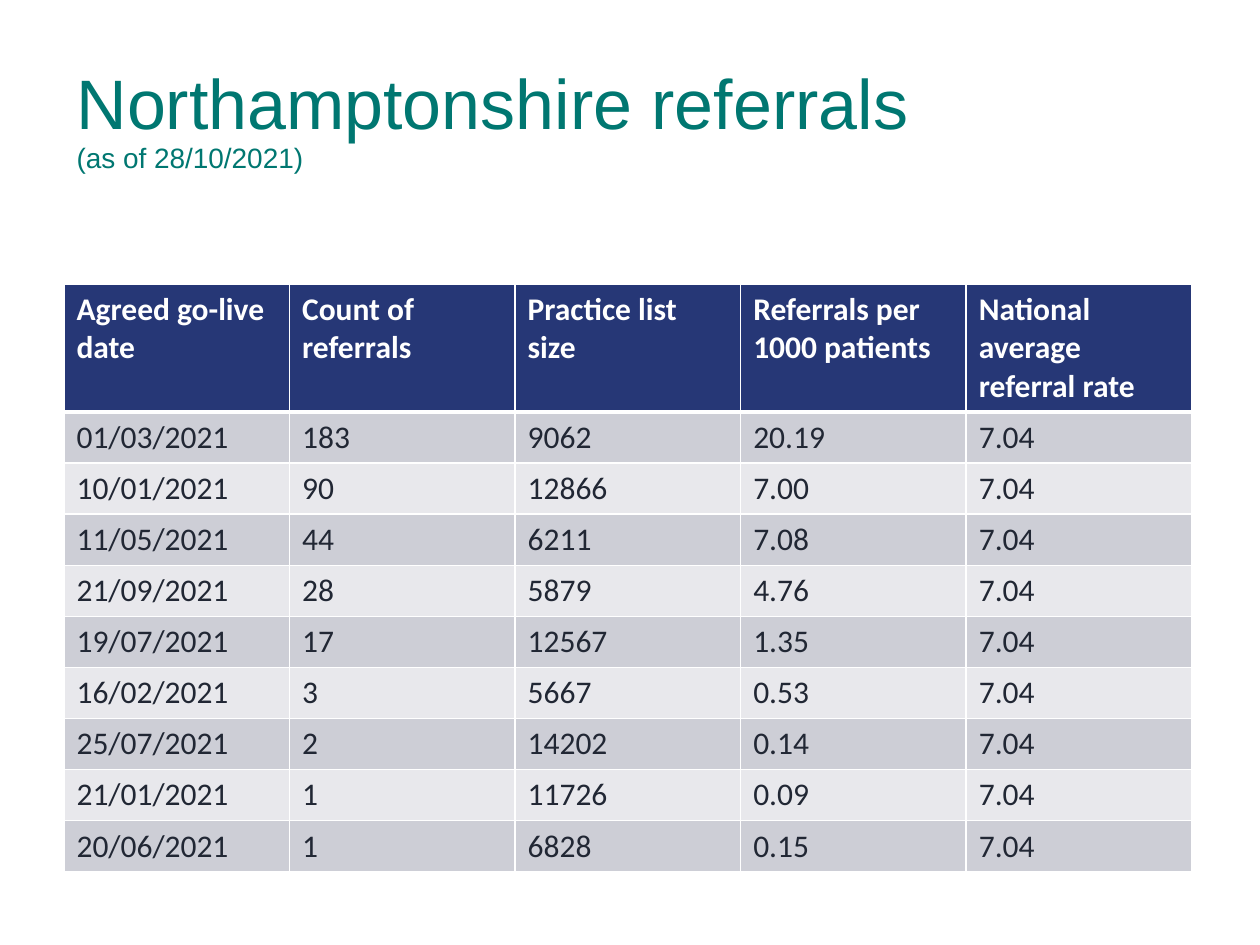
from collections import namedtuple
from dataclasses import dataclass

from lxml.etree import SubElement
from pptx import Presentation
from pptx.dml.color import RGBColor
from pptx.enum.text import MSO_ANCHOR, MSO_AUTO_SIZE, PP_ALIGN
from pptx.oxml.ns import qn
from pptx.util import Emu, Pt

Box = namedtuple("Box", "left top width height")


@dataclass(frozen=True)
class Theme:
    title_font: str = "Arial"
    table_font: str = "Calibri"
    title_color: str = "007771"
    header_fill: str = "263776"
    header_color: str = "FFFFFF"
    body_color: str = "212734"
    band_fills: tuple = ("CDCED6", "E8E8EC")
    border_color: str = "FFFFFF"
    title_size: int = 40
    date_size: int = 16
    table_size: int = 18
    border_width: int = 1
    header_rule_width: int = 3


THEME = Theme()
SLIDE_WIDTH, SLIDE_HEIGHT = 1260, 945
TITLE_BOX = Box(64, 30, 1128, 183)
TABLE_BOX = Box(64, 284, 1128, 586)
BODY_ROW_HEIGHT = 51

HEADINGS = ("Agreed go-live date", "Count of referrals", "Practice list size",
            "Referrals per 1000 patients", "National average referral rate")
NATIONAL_RATE = "7.04"
PRACTICES = (
    ("01/03/2021", "183", "9062", "20.19"),
    ("10/01/2021", "90", "12866", "7.00"),
    ("11/05/2021", "44", "6211", "7.08"),
    ("21/09/2021", "28", "5879", "4.76"),
    ("19/07/2021", "17", "12567", "1.35"),
    ("16/02/2021", "3", "5667", "0.53"),
    ("25/07/2021", "2", "14202", "0.14"),
    ("21/01/2021", "1", "11726", "0.09"),
    ("20/06/2021", "1", "6828", "0.15"),
)


def px(length):
    return Emu(round(length * 914400 / 126))


def add_run(paragraph, text, font_name, size, color, bold=False):
    run = paragraph.add_run()
    run.text = text
    run.font.name = font_name
    run.font.size = Pt(size)
    run.font.bold = bold
    run.font.color.rgb = RGBColor.from_string(color)


def set_borders(cell, top, bottom):
    """Draw all four cell borders; top and bottom are widths in points."""
    properties = cell._tc.get_or_add_tcPr()
    side = THEME.border_width
    for tag, width in (("lnL", side), ("lnR", side), ("lnT", top), ("lnB", bottom)):
        line = SubElement(properties, qn(f"a:{tag}"), w=str(Pt(width)))
        fill = SubElement(line, qn("a:solidFill"))
        SubElement(fill, qn("a:srgbClr"), val=THEME.border_color)


def place_title(slide, box):
    title = slide.shapes.title
    title.left, title.top, title.width, title.height = map(px, box)
    frame = title.text_frame
    frame.word_wrap = True
    frame.auto_size = MSO_AUTO_SIZE.NONE
    frame.vertical_anchor = MSO_ANCHOR.MIDDLE
    paragraph = frame.paragraphs[0]
    paragraph.alignment = PP_ALIGN.LEFT
    paragraph.line_spacing = 0.9
    add_run(paragraph, "Northamptonshire referrals ", THEME.title_font,
            THEME.title_size, THEME.title_color)
    paragraph.add_line_break()
    add_run(paragraph, "(as of 28/10/2021)", THEME.title_font,
            THEME.date_size, THEME.title_color)


def add_referrals_table(slide, box):
    rows = [HEADINGS] + [practice + (NATIONAL_RATE,) for practice in PRACTICES]
    table = slide.shapes.add_table(len(rows), len(HEADINGS), *map(px, box)).table
    for column in table.columns:
        column.width = px(box.width / len(HEADINGS))
    for row in table.rows:
        row.height = px(BODY_ROW_HEIGHT)
    table.rows[0].height = px(box.height - BODY_ROW_HEIGHT * len(PRACTICES))

    for row_index, values in enumerate(rows):
        is_header = row_index == 0
        fill = THEME.header_fill if is_header else THEME.band_fills[(row_index - 1) % 2]
        color = THEME.header_color if is_header else THEME.body_color
        top = THEME.header_rule_width if row_index == 1 else THEME.border_width
        bottom = THEME.header_rule_width if is_header else THEME.border_width
        for column_index, value in enumerate(values):
            cell = table.cell(row_index, column_index)
            set_borders(cell, top, bottom)
            cell.fill.solid()
            cell.fill.fore_color.rgb = RGBColor.from_string(fill)
            add_run(cell.text_frame.paragraphs[0], value, THEME.table_font,
                    THEME.table_size, color, bold=is_header)


def main():
    presentation = Presentation()
    presentation.slide_width = px(SLIDE_WIDTH)
    presentation.slide_height = px(SLIDE_HEIGHT)
    title_only = presentation.slide_layouts[5]
    slide = presentation.slides.add_slide(title_only)
    place_title(slide, TITLE_BOX)
    add_referrals_table(slide, TABLE_BOX)
    presentation.save("out.pptx")


if __name__ == "__main__":
    main()
